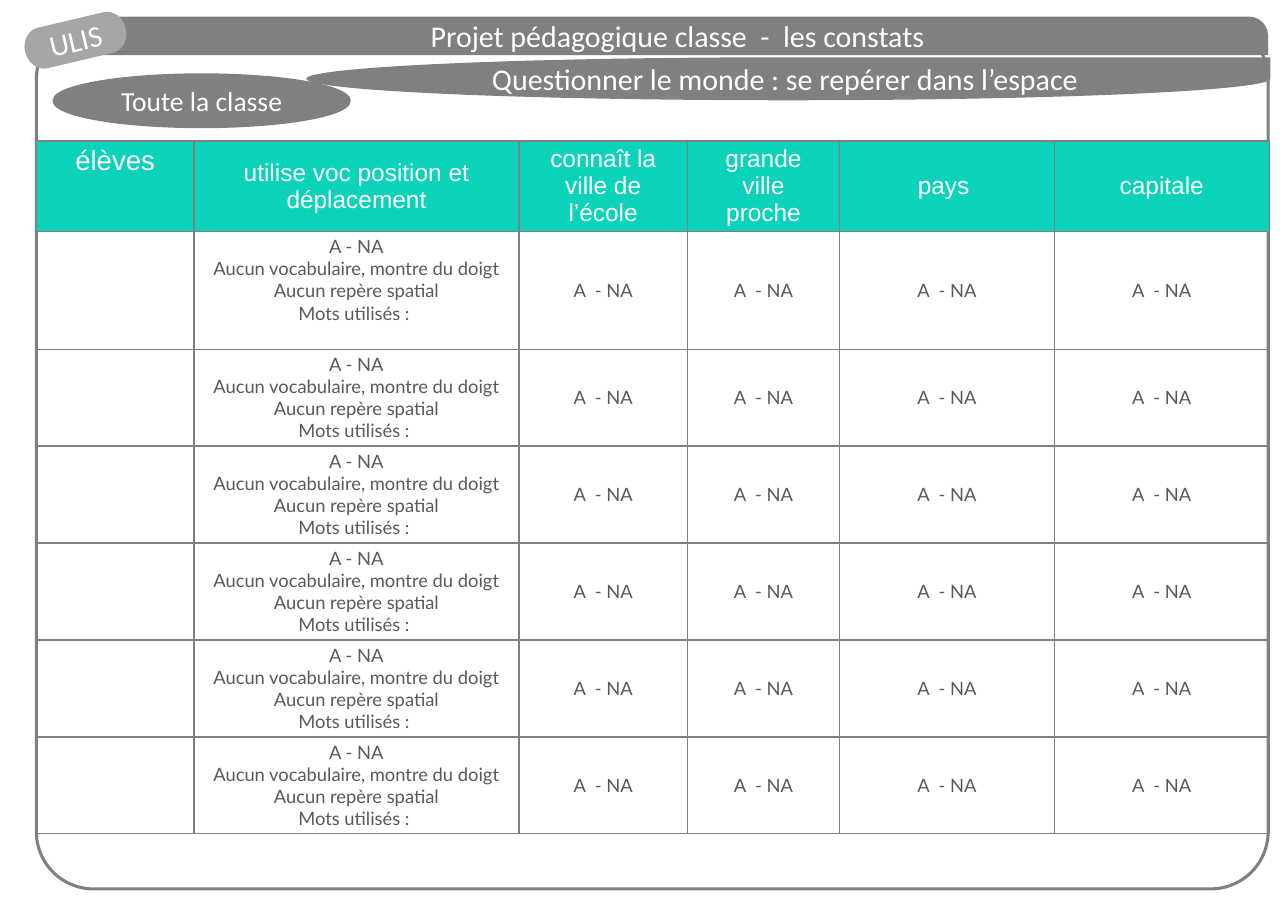
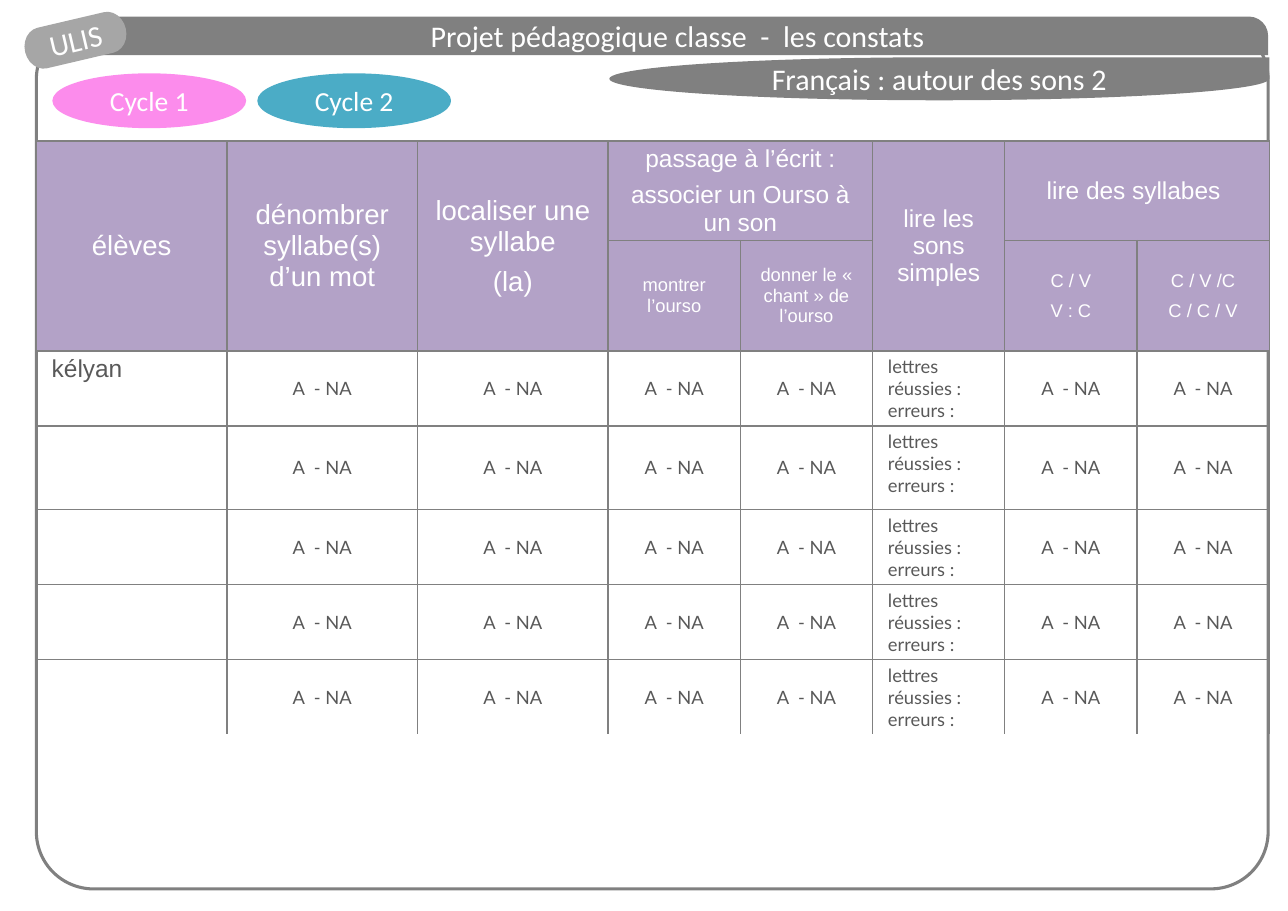
"""Build two class observation grids that share one frame, banner and badge."""
from pptx import Presentation
from pptx.dml.color import RGBColor
from pptx.enum.shapes import MSO_SHAPE
from pptx.enum.text import MSO_ANCHOR, MSO_AUTO_SIZE, PP_ALIGN
from pptx.oxml import parse_xml
from pptx.oxml.ns import nsdecls
from pptx.util import Inches, Pt

GREY = RGBColor(0x80, 0x80, 0x80)
LIGHT_GREY = RGBColor(0xA6, 0xA6, 0xA6)
TEXT_GREY = RGBColor(0x59, 0x59, 0x59)
WHITE = RGBColor(0xFF, 0xFF, 0xFF)
TEAL = RGBColor(0x0B, 0xD3, 0xBB)
LILAC = RGBColor(0xB3, 0xA2, 0xC7)
BLUE = RGBColor(0x4B, 0xAC, 0xC6)
PINK = RGBColor(0xFC, 0x8C, 0xEC)

BANNER_FONT = {"name": "Calibri", "size": Pt(19.6)}
GROUP_FONT = {"name": "Calibri", "size": Pt(18)}
BODY_FONT = {"name": "Lato", "size": Pt(12)}
PUPIL_FONT = {"name": "Arial", "size": Pt(16)}
CELL_MARGINS = {
    "margin_left": Inches(0.14), "margin_right": Inches(0.14),
    "margin_top": Inches(0.04), "margin_bottom": Inches(0.04),
}
FRAME_FORMAT = {
    "word_wrap": True, "auto_size": MSO_AUTO_SIZE.NONE,
    "vertical_anchor": MSO_ANCHOR.MIDDLE,
    "margin_left": 0, "margin_right": 0, "margin_top": 0, "margin_bottom": 0,
}

RESULT = "A  - NA"
VOCABULARY = "A - NA\nAucun vocabulaire, montre du doigt\nAucun repère spatial\nMots utilisés : "
LETTERS = "lettres réussies :\nerreurs :"

PAGES = [
    {
        "title": "Questionner le monde : se repérer dans l’espace ",
        "title_box": (2.78, 0.52, 8.75, 0.39),
        "groups": [("Toute la classe", 0.49, 2.68, GREY)],
        "columns": [1.43, 2.95, 1.53, 1.38, 1.95, 1.95],
        "rows": [0.82, 1.07] + [0.87] * 5,
        "header_rows": 1,
        "header_color": TEAL,
        "header": {
            (0, 0): ("élèves", 18),
            (0, 1): ("utilise voc position et déplacement", 16),
            (0, 2): ("connaît la ville de l’école", 16),
            (0, 3): ("grande ville proche", 16),
            (0, 4): ("pays ", 16),
            (0, 5): ("capitale", 16),
        },
        "merges": [],
        "body": ["", VOCABULARY] + [RESULT] * 4,
        "pupils": {},
        "top_cells": {(0, 0), (1, 1)},
        "closed": True,
    },
    {
        "title": "Français : autour des sons 2",
        "title_box": (5.53, 0.52, 5.99, 0.39),
        "groups": [("Cycle 2", 2.35, 1.73, BLUE), ("Cycle 1", 0.49, 1.73, PINK)],
        "columns": [1.73] * 3 + [1.2] * 5,
        "rows": [0.9, 1, 0.68, 0.76] + [0.68] * 3,
        "header_rows": 2,
        "header_color": LILAC,
        "header": {
            (0, 0): ("élèves", 18),
            (0, 1): ("dénombrer syllabe(s) d’un mot", 18),
            (0, 2): ("localiser une syllabe\n(la)", 18),
            (0, 3): ("passage à l’écrit :\nassocier un Ourso à un son", 16),
            (0, 5): ("lire les sons simples", 16),
            (0, 6): ("lire des syllabes ", 16),
            (1, 3): ("montrer l’ourso", 12),
            (1, 4): ("donner le « chant » de l’ourso", 12),
            (1, 6): ("C / V\nV : C", 12),
            (1, 7): ("C / V /C\nC / C / V", 12),
        },
        "merges": [(0, 0, 1, 0), (0, 1, 1, 1), (0, 2, 1, 2),
                   (0, 3, 0, 4), (0, 5, 1, 5), (0, 6, 0, 7)],
        "body": [""] + [RESULT] * 4 + [LETTERS] + [RESULT] * 2,
        "pupils": {2: "kélyan"},
        "top_cells": {(row, 5) for row in range(2, 7)} | {(2, 0)},
        "closed": False,
    },
]


def write_text(text_frame, text, font_format, color, alignment=PP_ALIGN.CENTER, gap=0):
    """Fill a text frame, one paragraph a line, with one font throughout."""
    text_frame.text = text
    for index, paragraph in enumerate(text_frame.paragraphs):
        paragraph.alignment = alignment
        paragraph.space_before = Pt(gap if index else 0)
        for run in paragraph.runs:
            for name, value in font_format.items():
                setattr(run.font, name, value)
            run.font.color.rgb = color


def add_preset(slide, kind, box, fill=None, line=None):
    """Add a preset shape without shadow, with optional fill and line."""
    shape = slide.shapes.add_shape(kind, *map(Inches, box))
    shape.shadow.inherit = False
    if fill is None:
        shape.fill.background()
    else:
        shape.fill.solid()
        shape.fill.fore_color.rgb = fill
    if line is None:
        shape.line.fill.background()
    else:
        shape.line.color.rgb = line
        shape.line.width = Pt(2)
    for name, value in FRAME_FORMAT.items():
        setattr(shape.text_frame, name, value)
    return shape


presentation = Presentation()
presentation.slide_width = Inches(11.69)
presentation.slide_height = Inches(8.27)

for page in PAGES:
    slide = presentation.slides.add_slide(presentation.slide_layouts[5])

    frame = add_preset(slide, MSO_SHAPE.ROUNDED_RECTANGLE, (0.33, 0.2, 11.18, 7.87), line=GREY)
    frame.adjustments[0] = 0.066

    title_band = add_preset(slide, MSO_SHAPE.TEAR, page["title_box"], GREY)
    title = slide.shapes.title
    title_band.element.addnext(title.element)
    title.left, title.top, title.width, title.height = map(Inches, page["title_box"])
    for name, value in FRAME_FORMAT.items():
        setattr(title.text_frame, name, value)
    write_text(title.text_frame, page["title"], BANNER_FONT, WHITE)

    banner = add_preset(slide, MSO_SHAPE.ROUND_1_RECTANGLE, (0.84, 0.15, 10.67, 0.35), GREY)
    banner.adjustments[0] = 0.5
    write_text(banner.text_frame, "Projet pédagogique classe  -  les constats", BANNER_FONT, WHITE)

    badge = add_preset(slide, MSO_SHAPE.FLOWCHART_TERMINATOR, (0.23, 0.19, 0.91, 0.35),
                       LIGHT_GREY, LIGHT_GREY)
    badge.rotation = 346.8
    write_text(badge.text_frame, "ULIS", BANNER_FONT, WHITE)

    columns, rows = page["columns"], page["rows"]
    table = slide.shapes.add_table(
        len(rows), len(columns), Inches(0.33), Inches(1.28),
        Inches(sum(columns)), Inches(sum(rows))).table
    table.first_row = table.horz_banding = False
    for column, width in zip(table.columns, columns):
        column.width = Inches(width)
    for row, height in zip(table.rows, rows):
        row.height = Inches(height)

    for row in range(len(rows)):
        for column in range(len(columns)):
            cell = table.cell(row, column)
            borders = {
                "lnL": True, "lnR": True, "lnT": True,
                "lnB": row < len(rows) - 1 or page["closed"],
            }
            properties = cell._tc.get_or_add_tcPr()
            for tag, drawn in borders.items():
                paint = f'<a:solidFill><a:srgbClr val="{GREY}"/></a:solidFill>' if drawn else "<a:noFill/>"
                properties.append(parse_xml(
                    f'<a:{tag} {nsdecls("a")} w="{Pt(1)}">{paint}</a:{tag}>'))
            for name, value in CELL_MARGINS.items():
                setattr(cell, name, value)
            on_top = (row, column) in page["top_cells"]
            cell.vertical_anchor = MSO_ANCHOR.TOP if on_top else MSO_ANCHOR.MIDDLE

            if row < page["header_rows"]:
                cell.fill.solid()
                cell.fill.fore_color.rgb = page["header_color"]
                if (row, column) in page["header"]:
                    text, size = page["header"][row, column]
                    write_text(cell.text_frame, text, {"name": "Arial", "size": Pt(size)}, WHITE, gap=6)
                continue

            cell.fill.background()
            text = page["body"][column]
            if column == 0:
                write_text(cell.text_frame, page["pupils"].get(row, ""), PUPIL_FONT,
                           TEXT_GREY, PP_ALIGN.LEFT)
            else:
                alignment = PP_ALIGN.JUSTIFY if text == LETTERS else PP_ALIGN.CENTER
                write_text(cell.text_frame, text, BODY_FONT, TEXT_GREY, alignment)

    for first_row, first_column, last_row, last_column in page["merges"]:
        table.cell(first_row, first_column).merge(table.cell(last_row, last_column))

    for text, left, width, color in page["groups"]:
        group = add_preset(slide, MSO_SHAPE.OVAL, (left, 0.68, width, 0.47), color, color)
        write_text(group.text_frame, text, GROUP_FONT, WHITE)

presentation.save("out.pptx")
